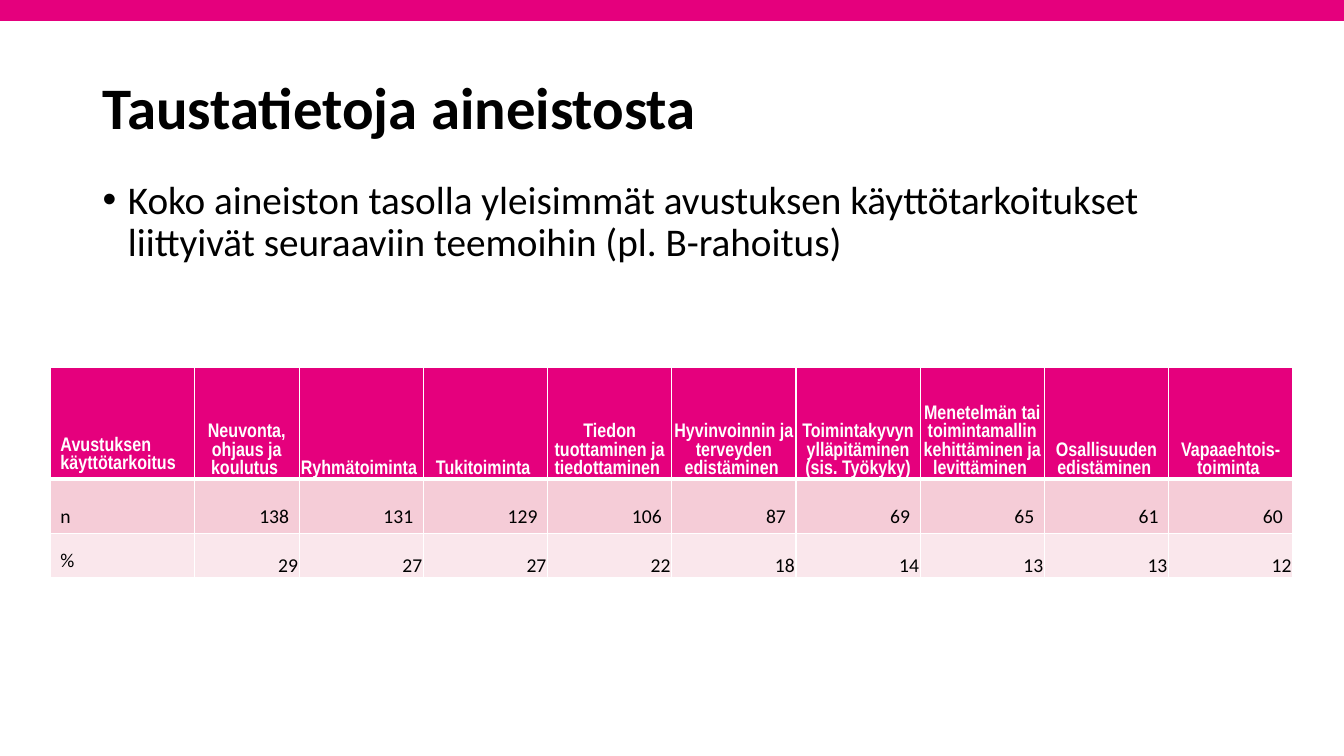
from dataclasses import dataclass

from lxml import etree
from pptx import Presentation
from pptx.dml.color import RGBColor
from pptx.enum.shapes import MSO_SHAPE
from pptx.enum.text import MSO_ANCHOR, MSO_AUTO_SIZE, PP_ALIGN
from pptx.oxml.ns import qn
from pptx.util import Cm, Pt

RECTANGLE = MSO_SHAPE.RECTANGLE
TOP, MIDDLE, BOTTOM = MSO_ANCHOR.TOP, MSO_ANCHOR.MIDDLE, MSO_ANCHOR.BOTTOM
NO_AUTOFIT = MSO_AUTO_SIZE.NONE
LEFT, CENTER, RIGHT = PP_ALIGN.LEFT, PP_ALIGN.CENTER, PP_ALIGN.RIGHT

MAGENTA = RGBColor(0xE5, 0x00, 0x7D)
PINK = RGBColor(0xF5, 0xCC, 0xD7)
PALE_PINK = RGBColor(0xFA, 0xE7, 0xEC)
WHITE = RGBColor(0xFF, 0xFF, 0xFF)
BLACK = RGBColor(0x00, 0x00, 0x00)

COLUMN_WIDTHS = [3.63, 2.64] + [3.13] * 8


@dataclass
class TableRow:
    label: str
    values: list[str]
    height: float
    fill: RGBColor
    color: RGBColor = BLACK
    font: str = "Calibri"
    bold: bool = False
    alignment: PP_ALIGN = RIGHT
    tight: bool = True
    top_border: float = 1
    bottom_border: float = 1


ROWS = [
    TableRow(
        "Avustuksen käyttötarkoitus",
        [
            "Neuvonta, ohjaus ja koulutus ",
            "Ryhmätoiminta ",
            "Tukitoiminta ",
            "Tiedon tuottaminen ja tiedottaminen ",
            "Hyvinvoinnin ja terveyden edistäminen ",
            "Toimintakyvyn ylläpitäminen (sis. Työkyky)",
            "Menetelmän tai toimintamallin kehittäminen ja levittäminen ",
            "Osallisuuden edistäminen ",
            "Vapaaehtois-toiminta ",
        ],
        2.82, MAGENTA, color=WHITE, font="Arial Narrow", bold=True,
        alignment=CENTER, bottom_border=3,
    ),
    TableRow("n", ["138", "131", "129", "106", "87", "69", "65", "61", "60"],
             1.37, PINK, tight=False, top_border=3),
    TableRow("%", ["29", "27", "27", "22", "18", "14", "13", "13", "12"],
             1.12, PALE_PINK),
]


def write_text(text_frame, text: str, *, size: float, font: str = "Calibri",
               color: RGBColor = BLACK, bold: bool = False,
               alignment: PP_ALIGN = LEFT, line_spacing: float = 1.0,
               bullet: str = "") -> None:
    paragraph = text_frame.paragraphs[0]
    paragraph.text = text
    paragraph.alignment = alignment
    paragraph.line_spacing = line_spacing
    paragraph.space_before = Pt(0)
    if bullet:
        properties = paragraph._p.get_or_add_pPr()
        properties.set("marL", str(Cm(0.64)))
        properties.set("indent", str(Cm(-0.64)))
        etree.SubElement(properties, qn("a:buFont"), typeface="Arial")
        etree.SubElement(properties, qn("a:buChar"), char=bullet)
    run_font = paragraph.runs[0].font
    run_font.name = font
    run_font.size = Pt(size)
    run_font.bold = bold
    run_font.color.rgb = color


def place_text(shape, top: float, height: float, anchor: MSO_ANCHOR) -> None:
    shape.left, shape.top = Cm(2.33), Cm(top)
    shape.width, shape.height = Cm(29.21), Cm(height)
    shape.text_frame.word_wrap = True
    shape.text_frame.auto_size = NO_AUTOFIT
    shape.text_frame.vertical_anchor = anchor


def add_borders(cell, row: TableRow) -> None:
    properties = cell._tc.get_or_add_tcPr()
    widths = {"L": 1, "R": 1, "T": row.top_border, "B": row.bottom_border}
    for side, width in widths.items():
        line = etree.SubElement(properties, qn(f"a:ln{side}"), w=str(Pt(width)))
        fill = etree.SubElement(line, qn("a:solidFill"))
        etree.SubElement(fill, qn("a:srgbClr"), val=str(WHITE))


def fill_row(table, index: int, row: TableRow) -> None:
    table.rows[index].height = Cm(row.height)
    for column, text in enumerate([row.label] + row.values):
        cell = table.cell(index, column)
        add_borders(cell, row)
        cell.fill.solid()
        cell.fill.fore_color.rgb = row.fill
        cell.vertical_anchor = BOTTOM
        if column and row.tight:
            cell.margin_left = cell.margin_right = cell.margin_top = Cm(0.03)
            cell.margin_bottom = Cm(0)
        write_text(cell.text_frame, text, size=14, font=row.font,
                   color=row.color, bold=row.bold,
                   alignment=row.alignment if column else LEFT)


def add_purpose_table(slide) -> None:
    frame = slide.shapes.add_table(
        len(ROWS), len(COLUMN_WIDTHS), Cm(1.27), Cm(9.25),
        Cm(sum(COLUMN_WIDTHS)), Cm(sum(row.height for row in ROWS)))
    table = frame.table
    table.horz_banding = False
    for column, width in zip(table.columns, COLUMN_WIDTHS):
        column.width = Cm(width)
    for index, row in enumerate(ROWS):
        fill_row(table, index, row)


def main() -> None:
    presentation = Presentation()
    presentation.slide_width, presentation.slide_height = Cm(33.87), Cm(19.05)
    slide = presentation.slides.add_slide(presentation.slide_layouts[1])

    band = slide.shapes.add_shape(RECTANGLE, Cm(0), Cm(-0.13), Cm(33.87), Cm(0.66))
    band.shadow.inherit = False
    band.fill.solid()
    band.fill.fore_color.rgb = MAGENTA
    band.line.fill.background()

    title = slide.shapes.title
    place_text(title, 1.45, 2.67, MIDDLE)
    write_text(title.text_frame, "Taustatietoja aineistosta",
               size=42, bold=True, line_spacing=0.9)

    body = slide.placeholders[1]
    place_text(body, 4.42, 12.78, TOP)
    write_text(body.text_frame,
               "Koko aineiston tasolla yleisimmät avustuksen käyttötarkoitukset "
               "liittyivät seuraaviin teemoihin (pl. B-rahoitus)",
               size=28, line_spacing=0.9, bullet="•")

    add_purpose_table(slide)
    presentation.save("out.pptx")


if __name__ == "__main__":
    main()
